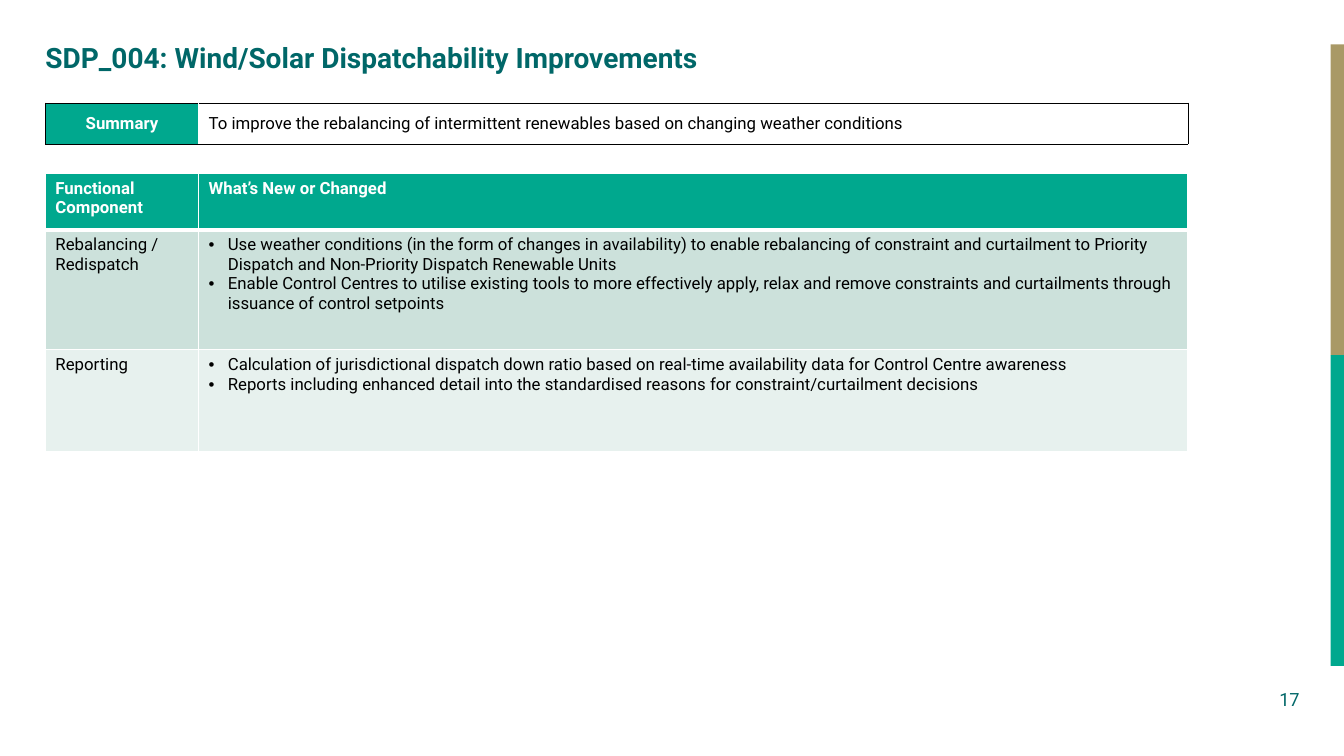
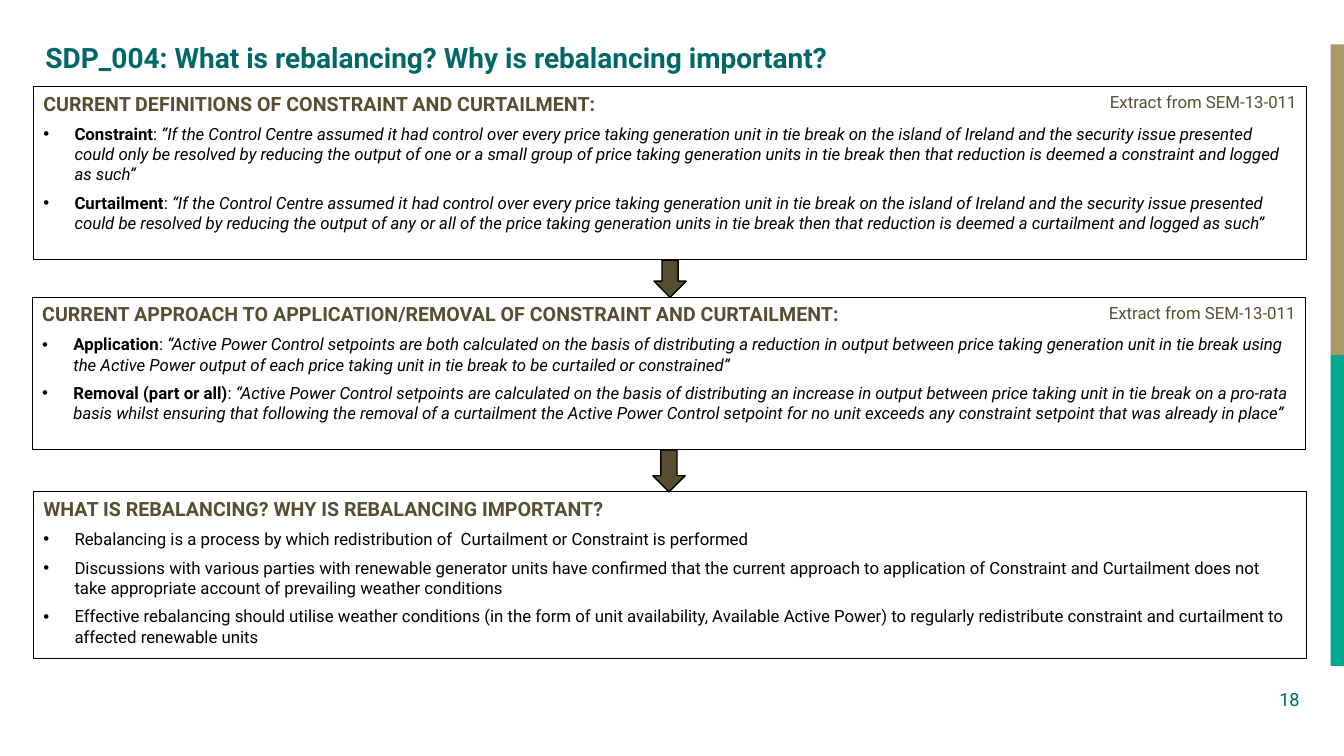
from dataclasses import dataclass

from lxml import etree
from pptx import Presentation
from pptx.dml.color import RGBColor
from pptx.enum.shapes import MSO_SHAPE
from pptx.enum.text import MSO_ANCHOR, PP_ALIGN
from pptx.oxml.ns import qn
from pptx.util import Inches, Pt

RECT, DOWN = MSO_SHAPE.RECTANGLE, MSO_SHAPE.DOWN_ARROW
TOP, MID, LOW = MSO_ANCHOR.TOP, MSO_ANCHOR.MIDDLE, MSO_ANCHOR.BOTTOM
LEFT, MIDDLE, RIGHT = PP_ALIGN.LEFT, PP_ALIGN.CENTER, PP_ALIGN.RIGHT


@dataclass(frozen=True)
class Theme:
    font: str = "Roboto"
    teal: str = "006768"
    green: str = "00A88E"
    sand: str = "A99966"
    brown: str = "574E31"
    black: str = "000000"
    white: str = "FFFFFF"
    bands: tuple = ("CCE1DB", "E7F1EE")
    title: int = 20
    head: int = 14
    body: int = 12
    page: int = 13


T = Theme()

# Grid: 100 columns by 100 rows
WIDE, HIGH = Inches(13.33), Inches(7.5)
EDGE = 3.38            # left edge of title and tables
COLS = (11.4, 73.6)    # table columns
THIN = (T.black, 0.25)
RULE = (T.white, 1)
THICK = (T.white, 3)


def col(n):
    return round(WIDE * n / 100)


def row(n):
    return round(HIGH * n / 100)


def place(x, y, w, h):
    return col(x), row(y), col(w), row(h)


def rgb(code):
    return RGBColor.from_string(code)


# Text
def write(para, runs, size, color, align=LEFT):
    """Runs are (text, style) pairs; style holds b for bold, i for italic."""
    para.alignment = align
    for text, style in runs:
        run = para.add_run()
        run.text = text
        font = run.font
        font.name, font.size = T.font, Pt(size)
        font.color.rgb = rgb(color)
        font.bold, font.italic = "b" in style, "i" in style


def bullet(para, indent):
    props = para._p.get_or_add_pPr()
    props.set("marL", str(Inches(indent)))
    props.set("indent", str(-Inches(indent)))
    etree.SubElement(props, qn("a:buFont")).set("typeface", "Arial")
    etree.SubElement(props, qn("a:buChar")).set("char", "•")


def next_para(frame, index):
    return frame.add_paragraph() if index else frame.paragraphs[0]


def label(slide, area, text, size, color, style="", align=LEFT,
          anchor=TOP, inset=True):
    frame = slide.shapes.add_textbox(*area).text_frame
    frame.word_wrap = True
    frame.vertical_anchor = anchor
    if not inset:
        frame.margin_left = frame.margin_right = 0
        frame.margin_top = frame.margin_bottom = 0
    write(frame.paragraphs[0], [(text, style)], size, color, align)
    return frame


# Shapes
def solid(slide, kind, area, fill, line=None):
    shape = slide.shapes.add_shape(kind, *area)
    shape.shadow.inherit = False
    shape.fill.solid()
    shape.fill.fore_color.rgb = rgb(fill)
    if line:
        shape.line.color.rgb = rgb(T.black)
        shape.line.width = Pt(line)
    else:
        shape.line.fill.background()
    return shape


def panel(slide, x, y, h, head, items, source=None):
    """Framed box with a heading, bullets and an optional source note."""
    wide, note = 94.75, 15.4
    box = solid(slide, RECT, place(x, y, wide, h), T.white, 0.75)
    frame = box.text_frame
    frame.word_wrap = True
    frame.vertical_anchor = TOP
    for i, runs in enumerate([[(head, "b")], *items]):
        para = next_para(frame, i)
        if i:
            bullet(para, 0.31)
        para.space_after = Pt(6)
        write(para, runs, T.body if i else T.head,
              T.black if i else T.brown)
    if source:
        label(slide, place(x + wide - note, y, note, 4), source,
              T.body, T.brown, align=RIGHT)
    return box


def arrow(slide, upper, lower):
    """Block arrow that fills the gap between two panels."""
    w, y = col(2.4), upper.top + upper.height
    x = upper.left + (upper.width - w) // 2
    solid(slide, DOWN, (x, y, w, lower.top - y), T.brown, 1)


# Tables
def border(cell, left=RULE, right=RULE, top=RULE, bottom=RULE):
    props = cell._tc.get_or_add_tcPr()
    for side, (color, width) in zip("LRTB", (left, right, top, bottom)):
        line = etree.SubElement(props, qn("a:ln" + side), w=str(Pt(width)))
        fill = etree.SubElement(line, qn("a:solidFill"))
        etree.SubElement(fill, qn("a:srgbClr"), val=color)


def grid(slide, y, rows):
    area = place(EDGE, y, sum(COLS), sum(rows))
    table = slide.shapes.add_table(len(rows), len(COLS), *area).table
    table.first_row = table.horz_banding = False
    for i, n in enumerate(COLS):
        table.columns[i].width = col(n)
    for i, n in enumerate(rows):
        table.rows[i].height = row(n)
    return table


def fill_cell(cell, lines, fill, color, style="", align=LEFT, anchor=TOP,
              dots=False, **sides):
    border(cell, **sides)
    cell.fill.solid()
    cell.fill.fore_color.rgb = rgb(fill)
    cell.vertical_anchor = anchor
    for i, text in enumerate(lines):
        para = next_para(cell.text_frame, i)
        if dots:
            bullet(para, 0.19)
        write(para, [(text, style)], T.body, color, align)


def summary(slide, y, name, text):
    table = grid(slide, y, [5.47])
    rim = {"top": THIN, "bottom": THIN}
    fill_cell(table.cell(0, 0), [name], T.green, T.white, "b", MIDDLE, MID,
              left=THIN, **rim)
    fill_cell(table.cell(0, 1), [text], T.white, T.black, anchor=MID,
              right=THIN, **rim)


def changes(slide, y, rows, heads, parts):
    table = grid(slide, y, rows)
    for i, head in enumerate(heads):
        fill_cell(table.cell(0, i), [head], T.green, T.white, "b",
                  bottom=THICK)
    for i, (name, points) in enumerate(parts, 1):
        band = T.bands[(i - 1) % 2]
        top = THICK if i == 1 else RULE
        fill_cell(table.cell(i, 0), [name], band, T.black, top=top)
        fill_cell(table.cell(i, 1), points, band, T.black, dots=True, top=top)


# Shared slide frame
def start(deck, title, page):
    slide = deck.slides.add_slide(deck.slide_layouts[6])
    y, h = 5.87, 41.1
    for i, color in enumerate((T.sand, T.green)):
        solid(slide, RECT, place(99, y + i * h, 1, h), color)
    frame = label(slide, place(EDGE, y, 90.9, 8.67), title, T.title, T.teal,
                  "b", inset=False)
    frame.paragraphs[0].line_spacing = 0.9
    label(slide, place(92.95, 88.13, 3.75, 5.87), str(page), T.page, T.teal,
          align=RIGHT, anchor=LOW, inset=False)
    return slide


def quote(term, text):
    return [(term, "b"), (": ", ""), (text, "i")]


# Slides
def improve(deck):
    slide = start(deck, "SDP_004: Wind/Solar Dispatchability Improvements", 17)
    summary(slide, 13.6, "Summary",
            "To improve the rebalancing of intermittent renewables based on "
            "changing weather conditions")
    changes(slide, 22.93, [7.47, 15.87, 13.47],
            ["Functional Component", "What’s New or Changed"], [
        ("Rebalancing / Redispatch", [
            "Use weather conditions (in the form of changes in availability) "
            "to enable rebalancing of constraint and curtailment to Priority "
            "Dispatch and Non-Priority Dispatch Renewable Units",
            "Enable Control Centres to utilise existing tools to more "
            "effectively apply, relax and remove constraints and "
            "curtailments through issuance of control setpoints"]),
        ("Reporting", [
            "Calculation of jurisdictional dispatch down ratio based on "
            "real-time availability data for Control Centre awareness",
            "Reports including enhanced detail into the standardised reasons "
            "for constraint/curtailment decisions"])])


def explain(deck):
    slide = start(deck, "SDP_004: What is rebalancing? "
                  "Why is rebalancing important?", 18)
    source = "Extract from SEM-13-011"
    lead = ("“If the Control Centre assumed it had control over every price "
            "taking generation unit in tie break on the island of Ireland "
            "and the security issue presented could ")
    terms = panel(
        slide, 2.48, 11.47, 22.93,
        "CURRENT DEFINITIONS OF CONSTRAINT AND CURTAILMENT:", [
            quote("Constraint", lead +
                  "only be resolved by reducing the output of one or a small "
                  "group of price taking generation units in tie break then "
                  "that reduction is deemed a constraint and logged as such”"),
            quote("Curtailment", lead +
                  "be resolved by reducing the output of any or all of the "
                  "price taking generation units in tie break then that "
                  "reduction is deemed a curtailment and logged as such”")],
        source)
    method = panel(
        slide, 2.4, 39.33, 20.2,
        "CURRENT APPROACH TO APPLICATION/REMOVAL OF CONSTRAINT AND "
        "CURTAILMENT:", [
            quote("Application",
                  "“Active Power Control setpoints are both calculated on the "
                  "basis of distributing a reduction in output between price "
                  "taking generation unit in tie break using the Active Power "
                  "output of each price taking unit in tie break to be "
                  "curtailed or constrained”"),
            quote("Removal (part or all)",
                  "“Active Power Control setpoints are calculated on the "
                  "basis of distributing an increase in output between price "
                  "taking unit in tie break on a pro-rata basis whilst "
                  "ensuring that following the removal of a curtailment the "
                  "Active Power Control setpoint for no unit exceeds any "
                  "constraint setpoint that was already in place”")],
        source)
    reason = panel(
        slide, 2.48, 65.07, 22,
        "WHAT IS REBALANCING? WHY IS REBALANCING IMPORTANT?", [
            [("Rebalancing is a process by which redistribution of  "
              "Curtailment or Constraint is performed", "")],
            [("Discussions with various parties with renewable generator "
              "units have confirmed that the current approach to application "
              "of Constraint and Curtailment does not take appropriate "
              "account of prevailing weather conditions", "")],
            [("Effective rebalancing should utilise weather conditions (in "
              "the form of unit availability, Available Active Power) to "
              "regularly redistribute constraint and curtailment to affected "
              "renewable units", "")]])
    arrow(slide, terms, method)
    arrow(slide, method, reason)


def main():
    deck = Presentation()
    deck.slide_width, deck.slide_height = WIDE, HIGH
    improve(deck)
    explain(deck)
    deck.save("out.pptx")


if __name__ == "__main__":
    main()
